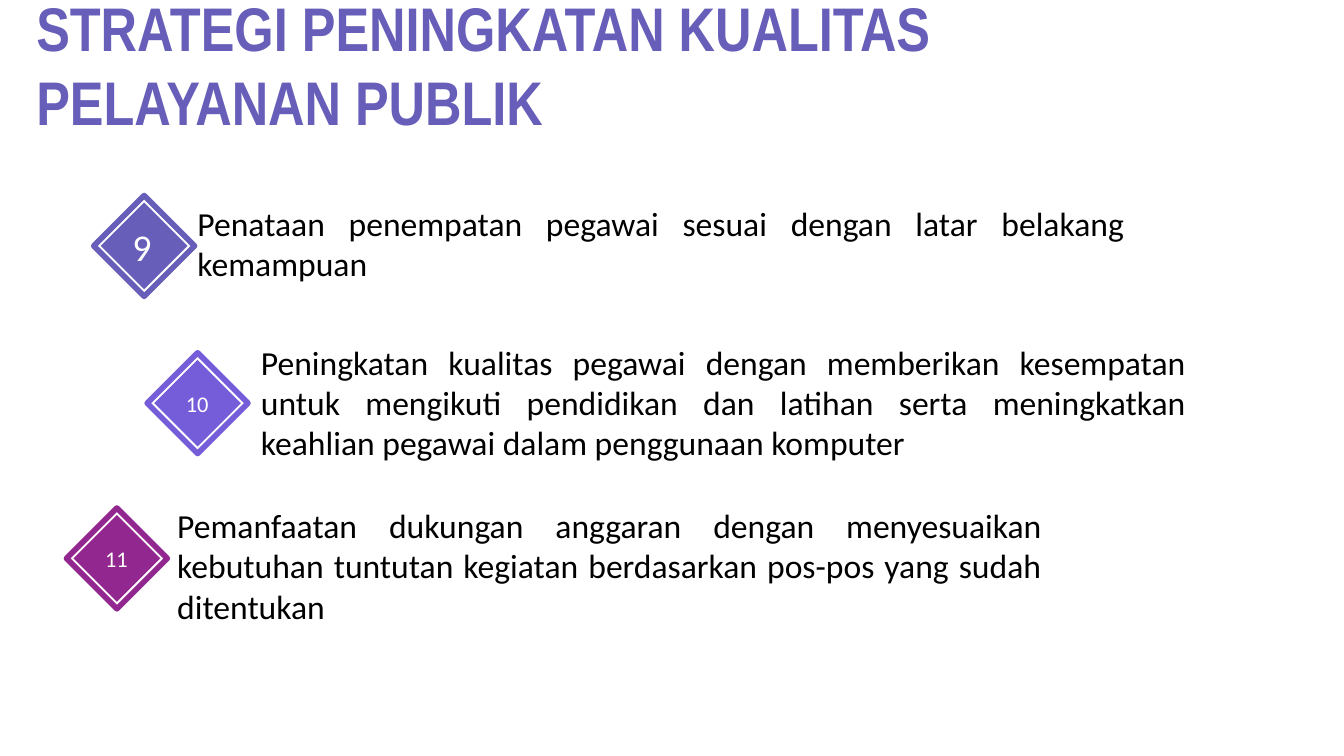
from dataclasses import dataclass

from lxml import etree
from pptx import Presentation
from pptx.dml.color import RGBColor
from pptx.enum.shapes import MSO_SHAPE
from pptx.enum.text import MSO_ANCHOR, MSO_AUTO_SIZE, PP_ALIGN
from pptx.oxml.ns import qn
from pptx.util import Pt

EMU_PER_PX = 9144  # 100 px to the inch

DIAMOND = MSO_SHAPE.DIAMOND
MIDDLE = MSO_ANCHOR.MIDDLE
GROW = MSO_AUTO_SIZE.SHAPE_TO_FIT_TEXT
LEFT, JUSTIFY = PP_ALIGN.LEFT, PP_ALIGN.JUSTIFY

INDIGO = RGBColor(0x66, 0x5E, 0xB8)
VIOLET = RGBColor(0x75, 0x5D, 0xD9)
PURPLE = RGBColor(0x92, 0x27, 0x8F)
WHITE = RGBColor(0xFF, 0xFF, 0xFF)
BLACK = RGBColor(0x00, 0x00, 0x00)

FRAME_SIZE = 100
FRAME_GAP = 7  # from the outlined diamond to the filled one


@dataclass(frozen=True)
class Strategy:
    number: str
    number_size: int
    color: RGBColor
    left: int
    top: int
    text: str
    text_box: tuple[int, int, int, int]


STRATEGIES = [
    Strategy("9", 27, INDIGO, 93, 194,
             "Penataan penempatan pegawai sesuai dengan latar belakang kemampuan",
             (186, 196, 939, 91)),
    Strategy("10", 16, VIOLET, 146, 350,
             "Peningkatan kualitas pegawai dengan memberikan kesempatan untuk "
             "mengikuti pendidikan dan latihan serta meningkatkan keahlian "
             "pegawai dalam penggunaan komputer",
             (249, 334, 937, 131)),
    Strategy("11", 16, PURPLE, 66, 504,
             "Pemanfaatan dukungan anggaran dengan menyesuaikan kebutuhan "
             "tuntutan kegiatan berdasarkan pos-pos yang sudah ditentukan",
             (166, 496, 877, 131)),
]


def px(value: int) -> int:
    return value * EMU_PER_PX


def write(tf, text: str, size: int, color: RGBColor, align,
          font: str = "Calibri", bold: bool = False) -> None:
    tf.word_wrap = True
    p = tf.paragraphs[0]
    p.text = text
    p.alignment = align
    r = p.runs[0]
    r.font.name = font
    r.font.size = Pt(size)
    r.font.bold = bold
    r.font.color.rgb = color


def add_diamond(slide, left: int, top: int, size: int):
    sp = slide.shapes.add_shape(DIAMOND, px(left), px(top), px(size), px(size))
    sp.shadow.inherit = False
    return sp


def add_strategy(slide, item: Strategy) -> None:
    # Filled diamond with the number
    badge = add_diamond(slide, item.left + FRAME_GAP, item.top + FRAME_GAP,
                        FRAME_SIZE - 2 * FRAME_GAP)
    badge.fill.solid()
    badge.fill.fore_color.rgb = item.color
    badge.line.fill.background()
    tf = badge.text_frame
    tf.vertical_anchor = MIDDLE
    tf.margin_right = 0
    write(tf, item.number, item.number_size, WHITE, JUSTIFY)

    # Outlined diamond with rounded corners
    frame = add_diamond(slide, item.left, item.top, FRAME_SIZE)
    frame.fill.background()
    frame.line.color.rgb = item.color
    frame.line.width = Pt(4)
    etree.SubElement(frame.element.spPr.find(qn("a:ln")), qn("a:round"))

    # Description
    box = slide.shapes.add_textbox(*map(px, item.text_box))
    box.text_frame.auto_size = GROW
    write(box.text_frame, item.text, 24, BLACK, JUSTIFY)


def main() -> None:
    prs = Presentation()
    prs.slide_width, prs.slide_height = px(1333), px(750)
    slide = prs.slides.add_slide(prs.slide_layouts[5])

    # Title
    title = slide.shapes.title
    title.left, title.top, title.width, title.height = map(px, (26, 21, 1208, 84))
    title.text_frame.auto_size = GROW
    title.text_frame.vertical_anchor = MIDDLE
    write(title.text_frame, "STRATEGI PENINGKATAN KUALITAS PELAYANAN PUBLIK",
          44, INDIGO, LEFT, "Arial Narrow", True)

    # Numbered strategies
    for item in STRATEGIES:
        add_strategy(slide, item)

    prs.save("out.pptx")


if __name__ == "__main__":
    main()
